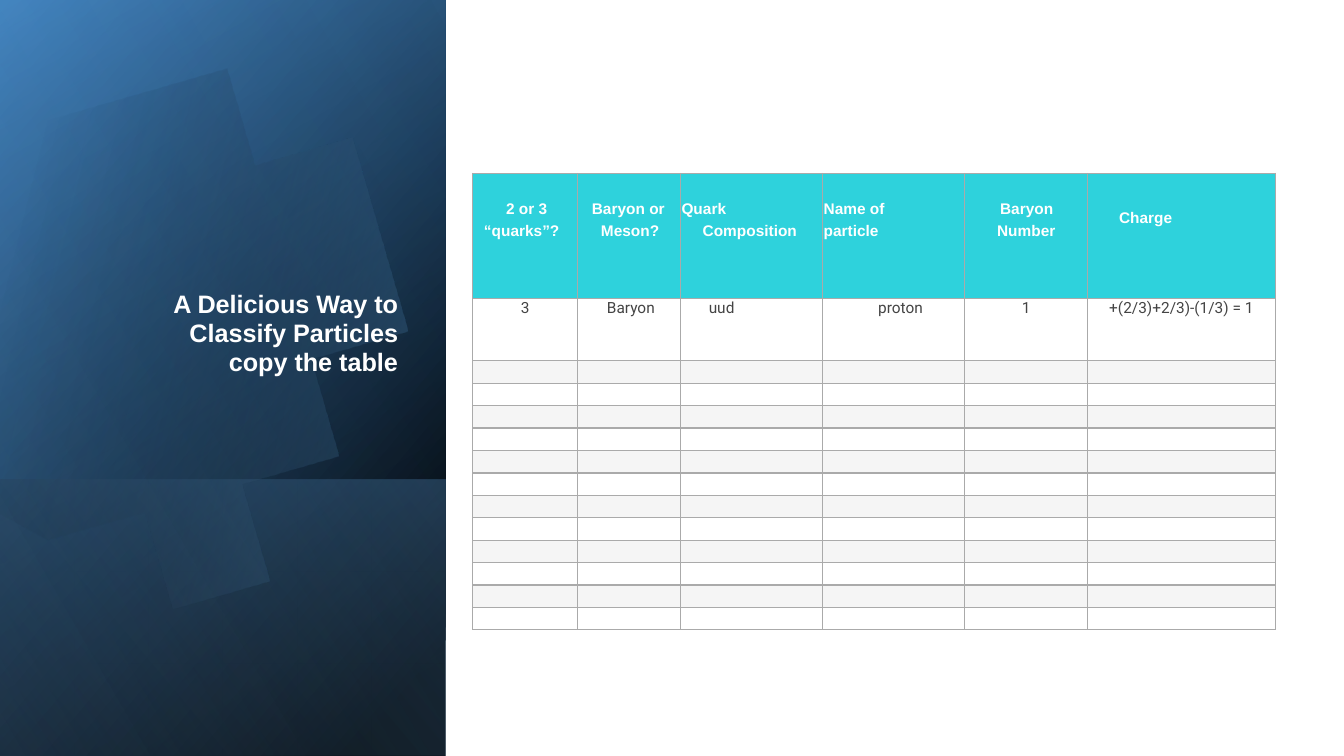
from math import cos, radians, sin

from lxml.etree import SubElement
from pptx import Presentation
from pptx.dml.color import RGBColor
from pptx.enum.shapes import MSO_SHAPE
from pptx.enum.text import MSO_ANCHOR, PP_ALIGN
from pptx.oxml.ns import qn
from pptx.util import Inches, Pt

COLORS = {
    "white": "FFFFFF", "black": "000000", "deep": "2E75B6", "blue": "5B9BD5",
    "pale": "9DC3E6", "header": "2ED2DC", "band": "F5F5F5",
    "border": "AAAAAA", "text": "444444",
}


def paint_gradient(shape, angle, stops):
    """Fill with stops of (position, color name, opacity), all in percent."""
    shape.shadow.inherit = False
    shape.line.fill.background()
    shape.fill.gradient()
    gradient = shape.fill._fill._gradFill
    stop_list = gradient.find(qn("a:gsLst"))
    for stop in list(stop_list):
        stop_list.remove(stop)
    for position, name, opacity in stops:
        stop = SubElement(stop_list, qn("a:gs"), pos=str(position * 1000))
        color = SubElement(stop, qn("a:srgbClr"), val=COLORS[name])
        SubElement(color, qn("a:alpha"), val=str(opacity * 1000))
    gradient.find(qn("a:lin")).set("ang", str(angle * 60000))


def add_run(paragraph, text, font, size, color, bold):
    run = paragraph.add_run()
    run.text = text
    run.font.name = font
    run.font.size = Pt(size)
    run.font.bold = bold
    run.font.color.rgb = RGBColor.from_string(COLORS[color])


presentation = Presentation()
presentation.slide_width = Inches(13.33)
presentation.slide_height = Inches(7.5)
slide = presentation.slides.add_slide(presentation.slide_layouts[5])
shapes = slide.shapes

# Left panel: layered gradients with a large disc
panel = (-1.54, 1.54, 7.5, 4.42)
layers = [
    (panel, 50, [(8, "black", 100), (100, "deep", 100)]),
    (panel, 30, [(0, "black", 0), (99, "blue", 46)]),
    ((0.84, 3.92, 2.74, 4.42), 130, [(2, "blue", 29), (100, "black", 30)]),
    ("disc", 30, [(29, "black", 0), (100, "blue", 43)]),
    (panel, 120, [(0, "black", 0), (99, "pale", 11)]),
]
disc_x, disc_y, disc_radius, disc_cut = 1.49, 3.39, 2.29, 135.7
pivot_x, pivot_y, disc_tilt = 1.58, 3.34, 16.1
for box, angle, stops in layers:
    if box == "disc":
        outline = []
        for step in range(91):
            turn = radians(disc_cut * (step / 45 - 1))
            x = disc_x + disc_radius * cos(turn) - pivot_x
            y = disc_y + disc_radius * sin(turn) - pivot_y
            tilt = radians(disc_tilt)
            outline.append((pivot_x + x * cos(tilt) - y * sin(tilt),
                            pivot_y + x * sin(tilt) + y * cos(tilt)))
        builder = shapes.build_freeform(*outline[0], scale=Inches(1))
        builder.add_line_segments(outline[1:], close=True)
        layer = builder.convert_to_shape()
        layer.rotation = 360 - disc_tilt
    else:
        layer = shapes.add_shape(MSO_SHAPE.RECTANGLE, *map(Inches, box))
        layer.rotation = 90
        layer._element.spPr.find(qn("a:xfrm")).set("flipH", "1")
    paint_gradient(layer, angle, stops)

# Title in front of the panel
title = shapes.title
shapes._spTree.append(title._element)
title.left, title.top = Inches(0.64), Inches(1.84)
title.width, title.height = Inches(3.41), Inches(2.62)
frame = title.text_frame
frame.word_wrap = True
frame.vertical_anchor = MSO_ANCHOR.BOTTOM
frame.margin_left = frame.margin_right = Inches(0.1)
frame.margin_bottom = Inches(0.72)
paragraph = frame.paragraphs[0]
paragraph.alignment = PP_ALIGN.RIGHT
paragraph.line_spacing = 0.95
add_run(paragraph, "A Delicious Way to Classify Particles", "Arial", 18, "white", True)
paragraph.add_line_break()
add_run(paragraph, "copy the table", "Arial", 18, "white", True)

# Particle table: text, left indent, first-line indent, right indent
headers = [
    ("2 or 3 “quarks”?", 0.1, 0.22, 0),
    ("Baryon or Meson?", 0.22, -0.09, 0),
    ("Quark Composition", 0.21, -0.21, 0),
    ("Name of particle", 0, 0, 0.4),
    ("Baryon Number", 0.31, 0.03, 0),
    ("Charge", 0.3, 0, 0),
]
example = [
    ("3", None), ("Baryon", 0.28), ("uud", 0.27),
    ("proton", 0.54), ("1", None), ("+(2/3)+2/3)-(1/3) = 1", None),
]
column_widths = [1.04, 1.02, 1.41, 1.41, 1.22, 1.86]
empty_rows = 12
row_heights = [1.24, 0.62] + [2.67 / empty_rows] * empty_rows
table = shapes.add_table(
    len(row_heights), len(column_widths),
    Inches(4.69), Inches(1.72), Inches(7.97), Inches(4.53)).table
table.first_row = table.horz_banding = False
for column, width in zip(table.columns, column_widths):
    column.width = Inches(width)

for row_index, height in enumerate(row_heights):
    table.rows[row_index].height = Inches(height)
    for column_index in range(len(column_widths)):
        cell = table.cell(row_index, column_index)
        cell.margin_left = cell.margin_right = cell.margin_top = Inches(0.01)
        cell.margin_bottom = 0
        properties = cell._tc.get_or_add_tcPr()
        for side in ("a:lnL", "a:lnR", "a:lnT", "a:lnB"):
            line = SubElement(properties, qn(side), w=str(Pt(1)))
            fill = SubElement(line, qn("a:solidFill"))
            SubElement(fill, qn("a:srgbClr"), val=COLORS["border"])
        cell.fill.solid()
        fill_name = "header" if row_index == 0 else "white" if row_index % 2 else "band"
        cell.fill.fore_color.rgb = RGBColor.from_string(COLORS[fill_name])

        paragraph = cell.text_frame.paragraphs[0]
        if row_index == 0:
            text, left, first, right = headers[column_index]
            indents = paragraph._p.get_or_add_pPr()
            indents.set("marL", str(Inches(left)))
            indents.set("indent", str(Inches(first)))
            cell.margin_right = Inches(0.01 + right)
            cell.margin_top = Inches(0.32 if text == "Charge" else 0.23)
            paragraph.line_spacing = 1.26
            add_run(paragraph, text, "Arial", 11, "white", True)
        elif row_index == 1:
            text, left = example[column_index]
            if left is None:
                paragraph.alignment = PP_ALIGN.CENTER
            else:
                paragraph._p.get_or_add_pPr().set("marL", str(Inches(left)))
            add_run(paragraph, text, "Roboto", 11, "text", False)
        else:
            SubElement(paragraph._p, qn("a:endParaRPr"), sz="1000")

presentation.save("out.pptx")
